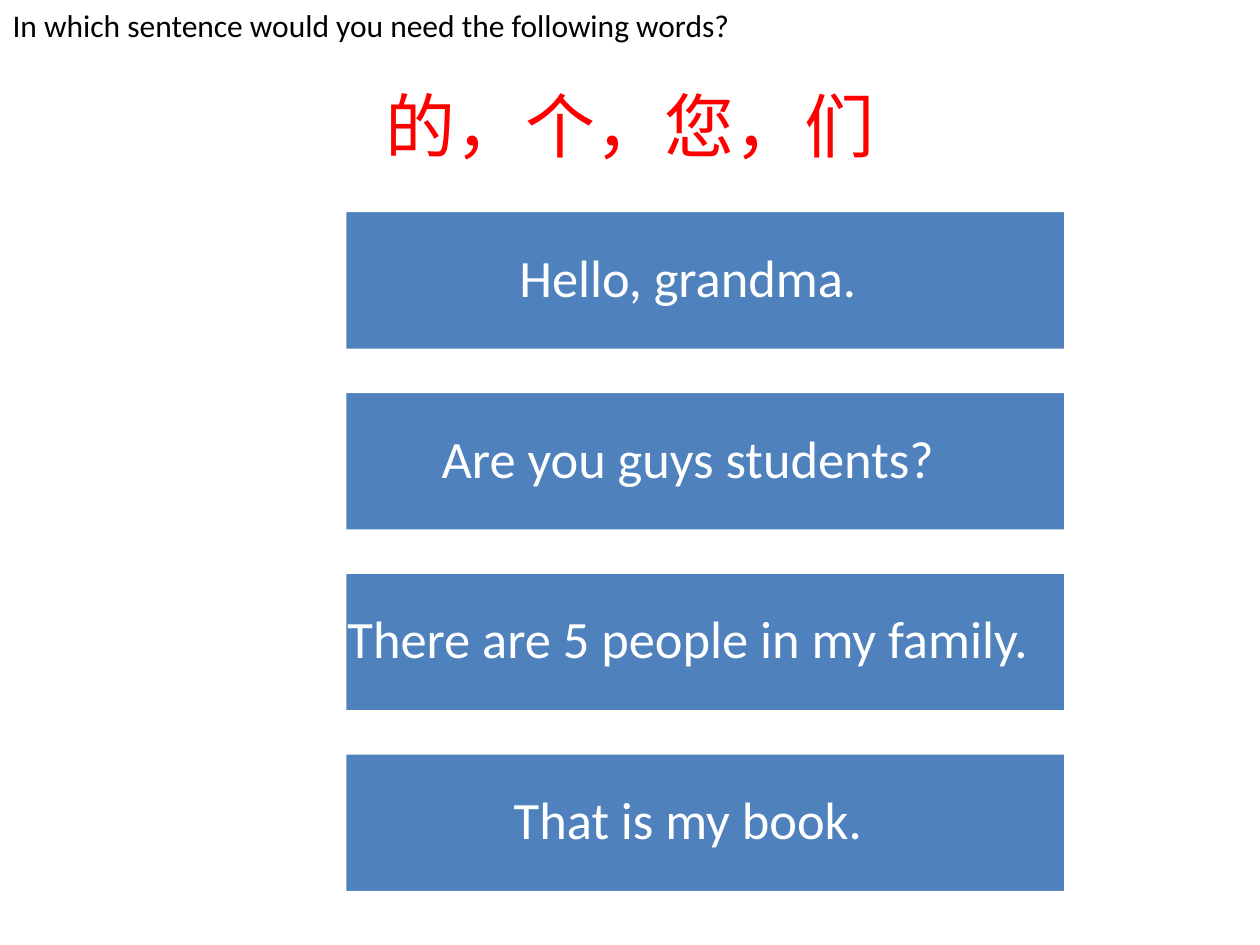
"""Builds a slide that matches Chinese words with the sentences that need them."""
from pptx import Presentation
from pptx.dml.color import RGBColor
from pptx.enum.shapes import MSO_SHAPE as Shape
from pptx.enum.text import MSO_ANCHOR as Anchor, MSO_AUTO_SIZE as AutoSize, PP_ALIGN as Align
from pptx.util import Inches, Pt

PROMPT = "In which sentence would you need the following words?"
WORDS = "的，个，您，们"
SENTENCES = [
    "Hello, grandma.",
    "Are you guys students?",
    "There are 5 people in my family.",
    "That is my book.",
]

BLUE = RGBColor(0x4F, 0x81, 0xBD)
WHITE = RGBColor(0xFF, 0xFF, 0xFF)
BLACK = RGBColor(0x00, 0x00, 0x00)
RED = RGBColor(0xFF, 0x00, 0x00)

WIDTH, HEIGHT = 10, 7.5
FIRST_TOP, ROW_STEP, BAR_HEIGHT = 1.67, 1.435, 1.11
BAR_LEFT, BAR_RIGHT, TEXT_LEFT = 1.92, 8.46, 2.2
COVER_LEFT, COVER_WIDTH, COVER_HEIGHT, COVER_RISE = 1.33, 1.42, 1.31, 0.17


def write(paragraph, text, size, color, font="Calibri", align=Align.LEFT, before=0, spacing=1.0):
    paragraph.alignment = align
    paragraph.space_before = Pt(before)
    paragraph.line_spacing = spacing
    run = paragraph.add_run()
    run.text = text
    run.font.size = Pt(size)
    run.font.color.rgb = color
    if font:
        run.font.name = font


def set_frame(frame, anchor, margins):
    frame.word_wrap = True
    frame.auto_size = AutoSize.NONE
    frame.vertical_anchor = anchor
    frame.margin_left, frame.margin_top, frame.margin_right, frame.margin_bottom = map(Inches, margins)


def add_block(slide, kind, box, fill, line=None):
    shape = slide.shapes.add_shape(kind, *map(Inches, box))
    shape.shadow.inherit = False
    shape.fill.solid()
    shape.fill.fore_color.rgb = fill
    if line is None:
        shape.line.fill.background()
    else:
        shape.line.color.rgb = line
        shape.line.width = Pt(2)
    return shape


def add_sentence(slide, top, sentence):
    bar = add_block(slide, Shape.PENTAGON, (BAR_LEFT, top, BAR_RIGHT - BAR_LEFT, BAR_HEIGHT), BLUE, WHITE)
    bar.rotation = 180
    add_block(slide, Shape.RECTANGLE, (COVER_LEFT, top - COVER_RISE, COVER_WIDTH, COVER_HEIGHT), WHITE)
    box = (TEXT_LEFT, top, BAR_RIGHT - TEXT_LEFT, BAR_HEIGHT)
    frame = slide.shapes.add_textbox(*map(Inches, box)).text_frame
    set_frame(frame, Anchor.MIDDLE, (0.49, 0.12, 0.23, 0.12))
    write(frame.paragraphs[0], sentence, 30, WHITE, align=Align.CENTER, spacing=0.9)


def main():
    presentation = Presentation()
    presentation.slide_width, presentation.slide_height = Inches(WIDTH), Inches(HEIGHT)
    slide = presentation.slides.add_slide(presentation.slide_layouts[5])

    title = slide.shapes.title
    title.left, title.top, title.width, title.height = map(Inches, (0, 0, WIDTH, 1.38))
    frame = title.text_frame
    set_frame(frame, Anchor.TOP, (0.1, 0.05, 0.1, 0.05))
    write(frame.paragraphs[0], PROMPT, 18, BLACK)
    write(frame.add_paragraph(), WORDS, 40, RED, font=None, align=Align.CENTER, before=22)

    for row, sentence in enumerate(SENTENCES):
        add_sentence(slide, FIRST_TOP + row * ROW_STEP, sentence)

    presentation.save("out.pptx")


if __name__ == "__main__":
    main()
